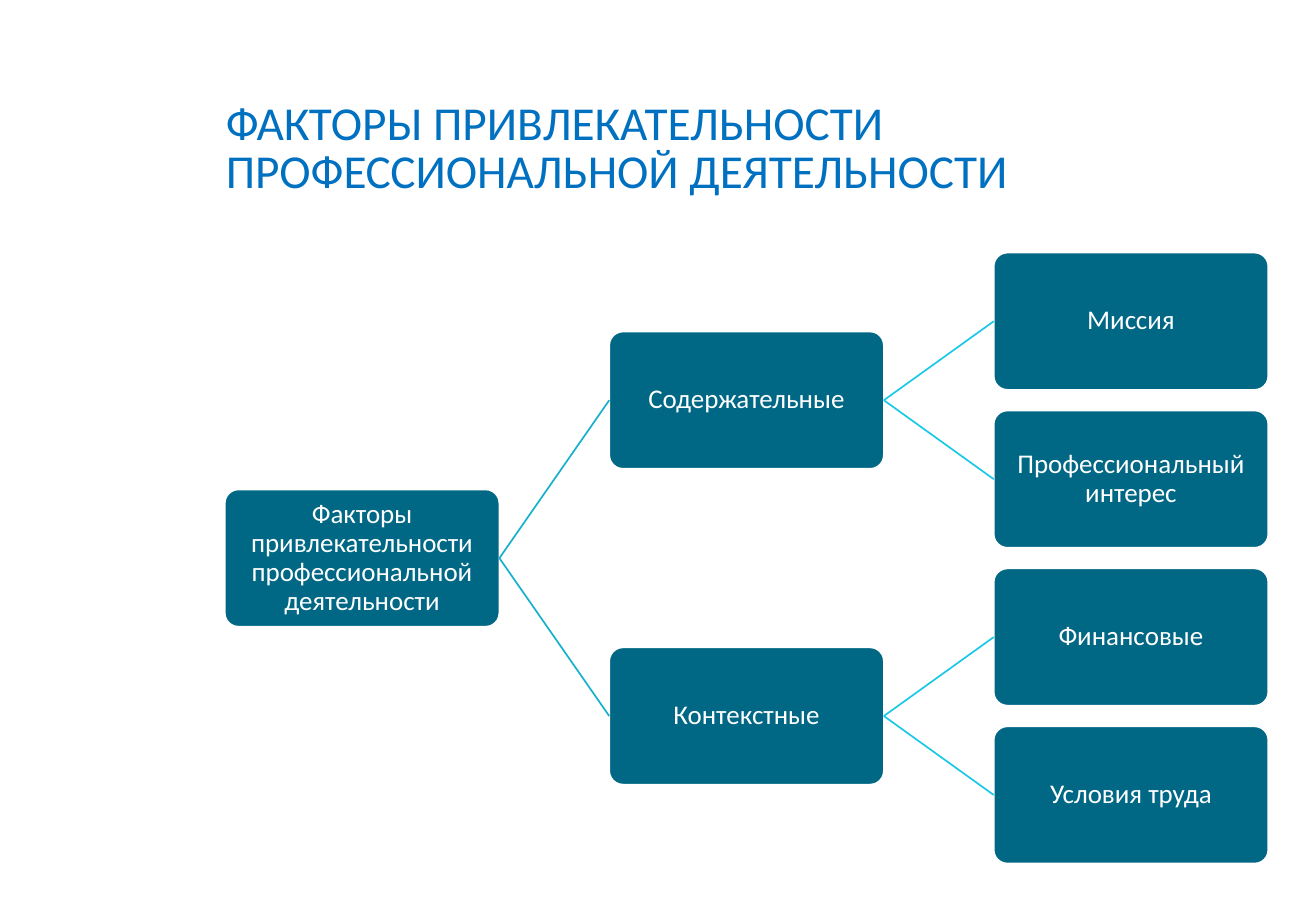
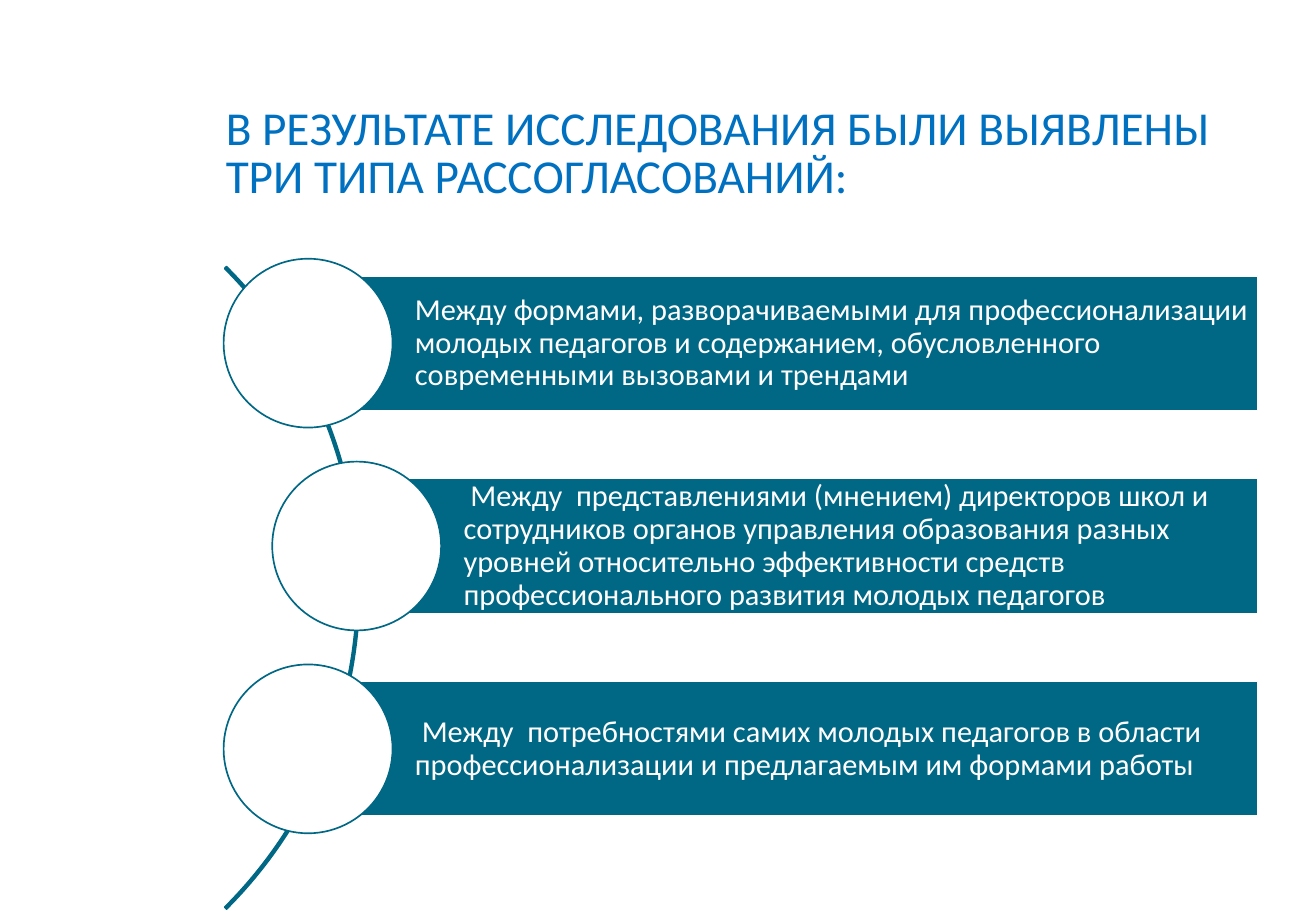
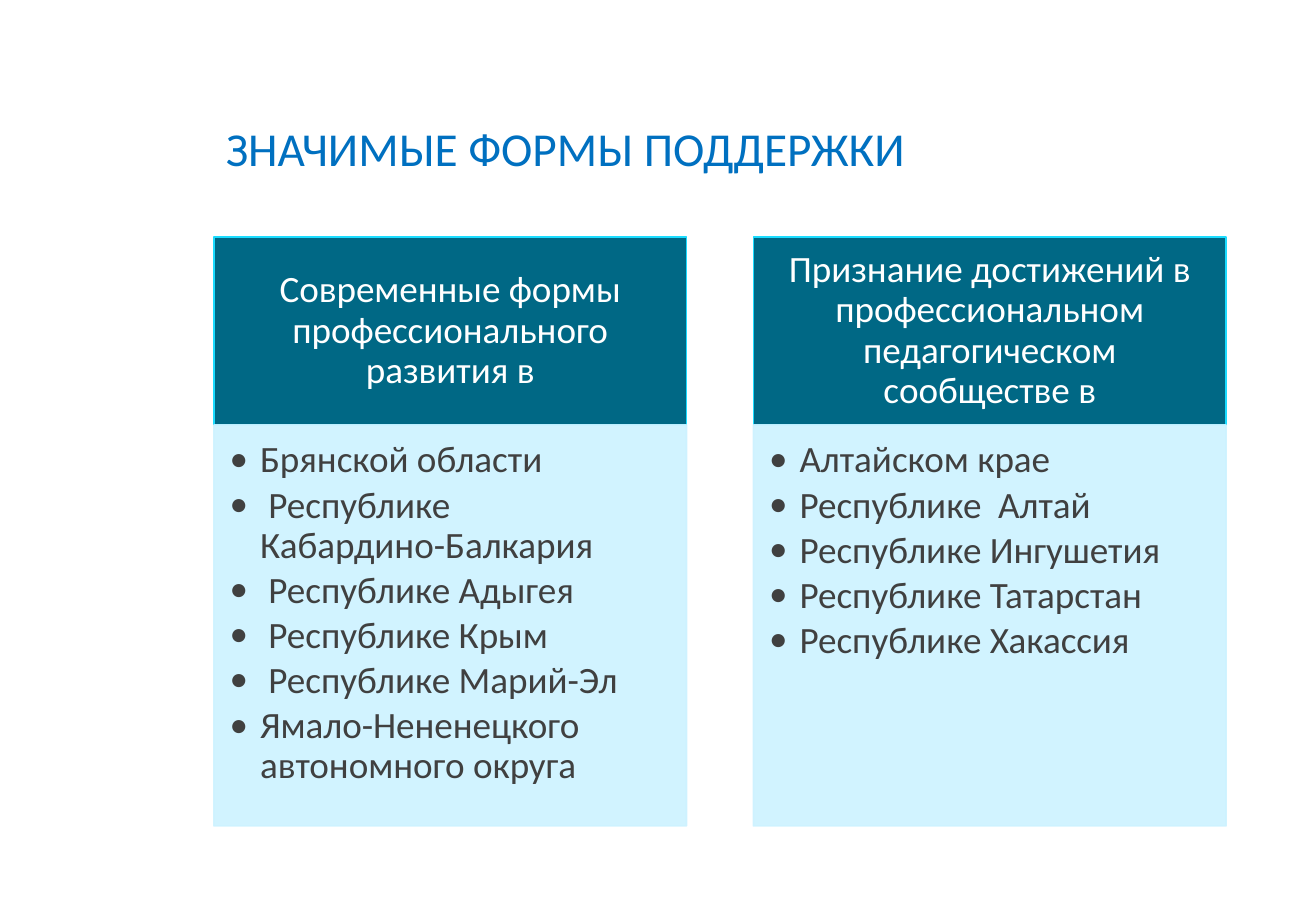
from dataclasses import dataclass
from typing import Optional

from lxml.etree import SubElement
from pptx import Presentation
from pptx.dml.color import RGBColor
from pptx.enum.shapes import MSO_CONNECTOR as Link, MSO_SHAPE as Preset
from pptx.enum.text import MSO_ANCHOR as Anchor, PP_ALIGN as Align
from pptx.oxml.ns import qn
from pptx.util import Inches, Pt

SLIDE_W, SLIDE_H = 10.83, 7.5
FONT = "Calibri"
BLUE = RGBColor(0x00, 0x70, 0xC0)
TEAL = RGBColor(0x00, 0x68, 0x85)
WHITE = RGBColor(0xFF, 0xFF, 0xFF)
CYAN = RGBColor(0x1B, 0xDC, 0xFF)
PALE = RGBColor(0xCD, 0xF2, 0xFF)
GREY = RGBColor(0x40, 0x40, 0x40)
TRUNK_LINE = RGBColor(0x16, 0xB0, 0xCC)
BRANCH_LINE = RGBColor(0x19, 0xC8, 0xE7)


@dataclass(frozen=True)
class Box:
    left: float
    top: float
    width: float
    height: float

    def emu(self) -> tuple:
        return tuple(Inches(v) for v in (self.left, self.top, self.width, self.height))


@dataclass(frozen=True)
class Grid:
    left: float
    top: float
    column_pitch: float
    row_pitch: float

    def cell(self, column: float, row: float, width: float, height: float) -> Box:
        return Box(self.left + column * self.column_pitch,
                   self.top + row * self.row_pitch, width, height)


@dataclass(frozen=True)
class TextStyle:
    size: int
    color: RGBColor
    insets: tuple = (0.1, 0.05, 0.1, 0.05)
    align: Align = Align.LEFT
    anchor: Anchor = Anchor.MIDDLE
    spacing: float = 0.9
    after: float = 0
    bulleted: bool = False


@dataclass(frozen=True)
class Node:
    label: str
    column: int
    row: float
    children: tuple = ()


@dataclass(frozen=True)
class Mismatch:
    text: str
    column: int


@dataclass(frozen=True)
class SupportForm:
    heading: str
    regions: tuple


TITLE_STYLE = TextStyle(28, BLUE, anchor=Anchor.BOTTOM, spacing=0.85)
NODE_STYLE = TextStyle(16, WHITE, (0.01,) * 4, Align.CENTER)
BAND_STYLE = TextStyle(18, WHITE, (0.88, 0.05, 0.05, 0.05))
HEADING_STYLE = TextStyle(22, WHITE, (0.17, 0.1, 0.17, 0.1), Align.CENTER)
REGION_STYLE = TextStyle(22, GREY, (0.13, 0.13, 0.17, 0.19), anchor=Anchor.TOP,
                         after=3, bulleted=True)

NODE_W, NODE_H = 2.26, 1.13
TREE_GRID = Grid(1.85, 2.08, 1.4 * NODE_W, 1.3)
CIRCLE, BAND_H, BAND_RIGHT = 1.39, 1.11, 10.35
MISMATCH_GRID = Grid(1.84, 2.13, 0.4, 1.67)
ARC = Box(-4.52, 1.1, 7.48, 7.48)
CARD_W, HEADING_H, REGIONS_H = 3.89, 1.55, 3.3
CARD_GRID = Grid(1.76, 1.95, 4.44, HEADING_H)

FACTORS = Node("Факторы привлекательности профессиональной деятельности", 0, 1.5, (
    Node("Содержательные", 1, 0.5, (
        Node("Миссия", 2, 0),
        Node("Профессиональный интерес", 2, 1))),
    Node("Контекстные", 1, 2.5, (
        Node("Финансовые", 2, 2),
        Node("Условия труда", 2, 3)))))

MISMATCHES = (
    Mismatch("Между формами, разворачиваемыми для профессионализации молодых педагогов "
             "и содержанием, обусловленного современными вызовами и трендами", 0),
    Mismatch(" Между  представлениями (мнением) директоров школ и сотрудников органов "
             "управления образования разных уровней относительно эффективности средств "
             "профессионального развития молодых педагогов", 1),
    Mismatch(" Между  потребностями самих молодых педагогов в области "
             "профессионализации и предлагаемым им формами работы", 0))

SUPPORT_FORMS = (
    SupportForm("Современные формы профессионального развития в", (
        "Брянской области", " Республике\nКабардино-Балкария", " Республике Адыгея",
        " Республике Крым", " Республике Марий-Эл",
        "Ямало-Нененецкого автономного округа")),
    SupportForm("Признание достижений в профессиональном педагогическом сообществе в", (
        "Алтайском крае", "Республике  Алтай", "Республике Ингушетия",
        "Республике Татарстан", "Республике Хакассия")))


def add_bullet(paragraph) -> None:
    props = paragraph._p.get_or_add_pPr()
    props.set("marL", str(Inches(0.25)))
    props.set("indent", str(-Inches(0.25)))
    SubElement(props, qn("a:buFont")).set("typeface", FONT)
    SubElement(props, qn("a:buChar")).set("char", "•")


def write(frame, texts: tuple, style: TextStyle) -> None:
    frame.word_wrap = True
    frame.vertical_anchor = style.anchor
    (frame.margin_left, frame.margin_top,
     frame.margin_right, frame.margin_bottom) = (Inches(v) for v in style.insets)
    for index, text in enumerate(texts):
        paragraph = frame.add_paragraph() if index else frame.paragraphs[0]
        if style.bulleted:
            add_bullet(paragraph)
        paragraph.alignment = style.align
        paragraph.line_spacing = style.spacing
        paragraph.space_before = Pt(0)
        paragraph.space_after = Pt(style.after)
        for number, line in enumerate(text.split("\n")):
            if number:
                paragraph.add_line_break()
            run = paragraph.add_run()
            run.text = line
            run.font.name = FONT
            run.font.size = Pt(style.size)
            run.font.color.rgb = style.color


def add_panel(slide, preset: Preset, box: Box, fill: RGBColor, line: RGBColor,
              texts: tuple = (), style: Optional[TextStyle] = None):
    panel = slide.shapes.add_shape(preset, *box.emu())
    panel.shadow.inherit = False
    panel.fill.solid()
    panel.fill.fore_color.rgb = fill
    panel.line.color.rgb = line
    panel.line.width = Pt(1)
    if style:
        write(panel.text_frame, texts, style)
    return panel


def set_opacity(panel, percent: int) -> None:
    for color in panel._element.spPr.iter(qn("a:srgbClr")):
        SubElement(color, qn("a:alpha")).set("val", str(percent * 1000))


def add_titled_slide(deck, title: str, height: float):
    slide = deck.slides.add_slide(deck.slide_layouts[6])
    heading = slide.shapes.add_textbox(*Box(1.76, 0.42, 8.33, height).emu())
    write(heading.text_frame, (title,), TITLE_STYLE)
    return slide


def join(slide, parent, child, color: RGBColor) -> None:
    branch = slide.shapes.add_connector(Link.STRAIGHT, 0, 0, 0, 0)
    branch.begin_connect(parent, 3)
    branch.end_connect(child, 1)
    branch.line.color.rgb = color
    branch.line.width = Pt(1)
    SubElement(branch._element.spPr, qn("a:effectLst"))


def draw_tree(slide, node: Node):
    box = TREE_GRID.cell(node.column, node.row, NODE_W, NODE_H)
    factor = add_panel(slide, Preset.ROUNDED_RECTANGLE, box, TEAL, WHITE,
                       (node.label,), NODE_STYLE)
    factor.adjustments[0] = 0.1
    for child in node.children:
        join(slide, factor, draw_tree(slide, child),
             BRANCH_LINE if node.column else TRUNK_LINE)
    return factor


def draw_mismatches(slide) -> None:
    arc = add_panel(slide, Preset.BLOCK_ARC, ARC, TEAL, TEAL)
    for index, value in enumerate((189, 27, 0.003)):
        arc.adjustments[index] = value
    for row, mismatch in enumerate(MISMATCHES):
        circle = MISMATCH_GRID.cell(mismatch.column, row, CIRCLE, CIRCLE)
        left = circle.left + CIRCLE / 2
        band = Box(left, circle.top + (CIRCLE - BAND_H) / 2, BAND_RIGHT - left, BAND_H)
        add_panel(slide, Preset.RECTANGLE, band, TEAL, WHITE, (mismatch.text,), BAND_STYLE)
        add_panel(slide, Preset.OVAL, circle, WHITE, TEAL)


def draw_support_forms(slide) -> None:
    for column, form in enumerate(SUPPORT_FORMS):
        add_panel(slide, Preset.RECTANGLE, CARD_GRID.cell(column, 0, CARD_W, HEADING_H),
                  TEAL, CYAN, (form.heading,), HEADING_STYLE)
        regions = add_panel(slide, Preset.RECTANGLE,
                            CARD_GRID.cell(column, 1, CARD_W, REGIONS_H),
                            PALE, PALE, form.regions, REGION_STYLE)
        set_opacity(regions, 90)


def main() -> None:
    deck = Presentation()
    deck.slide_width, deck.slide_height = Inches(SLIDE_W), Inches(SLIDE_H)
    draw_tree(add_titled_slide(
        deck, "ФАКТОРЫ ПРИВЛЕКАТЕЛЬНОСТИ ПРОФЕССИОНАЛЬНОЙ ДЕЯТЕЛЬНОСТИ", 1.26), FACTORS)
    draw_mismatches(add_titled_slide(
        deck, "В РЕЗУЛЬТАТЕ ИССЛЕДОВАНИЯ БЫЛИ ВЫЯВЛЕНЫ ТРИ ТИПА РАССОГЛАСОВАНИЙ:", 1.3))
    draw_support_forms(add_titled_slide(deck, "ЗНАЧИМЫЕ ФОРМЫ ПОДДЕРЖКИ", 1.08))
    deck.save("out.pptx")


if __name__ == "__main__":
    main()
